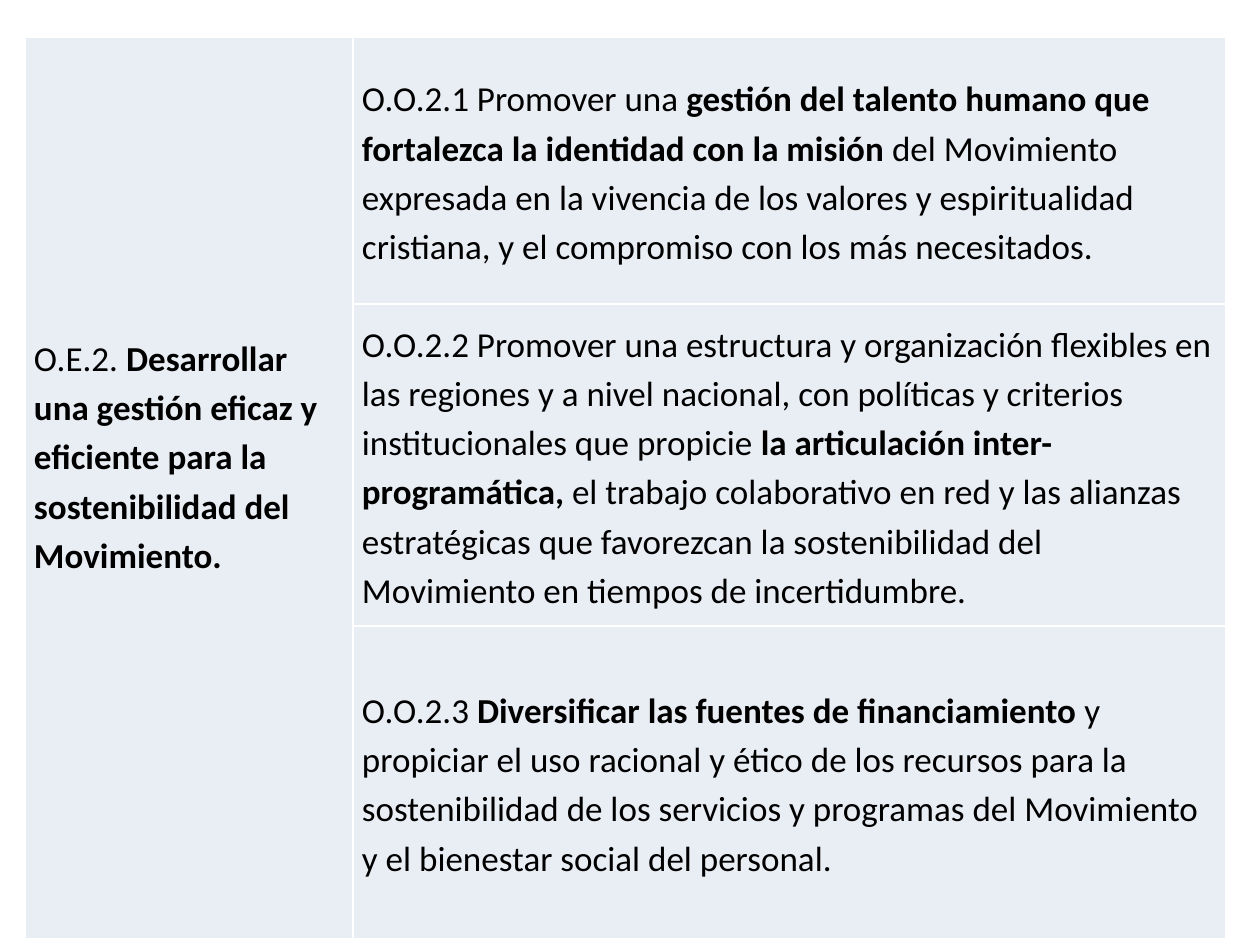
from dataclasses import dataclass

from lxml.etree import SubElement
from pptx import Presentation
from pptx.dml.color import RGBColor
from pptx.enum.text import MSO_ANCHOR
from pptx.oxml.ns import qn
from pptx.table import _Cell
from pptx.util import Emu, Pt

PX_PER_INCH = 126
COLS = (328, 873)
ROWS = (267, 322, 312)
INSET = 9
FILL, BORDER, TEXT = "E9EDF4", "FFFFFF", "000000"


@dataclass(frozen=True)
class Objective:
    row: int
    col: int
    runs: tuple[tuple[str, bool], ...]  # (text, bold)
    bottom: int = 0


OBJECTIVES = (
    # The bottom inset raises the text above the middle of the merged cell
    Objective(0, 0, (
        ("O.E.2. ", False),
        ("Desarrollar una gestión eficaz y eficiente para la "
         "sostenibilidad del Movimiento.", True),
    ), bottom=66),
    Objective(0, 1, (
        ("O.O.2.1 Promover una ", False),
        ("gestión del talento humano que fortalezca la identidad "
         "con la misión ", True),
        ("del Movimiento expresada en la vivencia de los valores y "
         "espiritualidad cristiana, y el compromiso con los más "
         "necesitados.", False),
    )),
    Objective(1, 1, (
        ("O.O.2.2 Promover una estructura y organización flexibles en las "
         "regiones y a nivel nacional, con políticas y criterios "
         "institucionales que propicie ", False),
        ("la articulación inter-programática,", True),
        (" el trabajo colaborativo en red y las alianzas estratégicas que "
         "favorezcan la sostenibilidad del Movimiento en tiempos de "
         "incertidumbre.", False),
    )),
    Objective(2, 1, (
        ("O.O.2.3 ", False),
        ("Diversificar las fuentes de financiamiento ", True),
        ("y propiciar el uso racional y ético de los recursos para la "
         "sostenibilidad de los servicios y programas del Movimiento y el "
         "bienestar social del personal.", False),
    )),
)


def px(n: int) -> Emu:
    return Emu(round(n * 914400 / PX_PER_INCH))


def rgb(color: str) -> RGBColor:
    return RGBColor.from_string(color)


def style_cell(cell: _Cell) -> None:
    tc_pr = cell._tc.get_or_add_tcPr()
    for side in ("a:lnL", "a:lnR", "a:lnT", "a:lnB"):
        ln = SubElement(tc_pr, qn(side), w=str(Pt(1)))
        fill = SubElement(ln, qn("a:solidFill"))
        SubElement(fill, qn("a:srgbClr"), val=BORDER)
    cell.fill.solid()
    cell.fill.fore_color.rgb = rgb(FILL)


def write_objective(cell: _Cell, objective: Objective) -> None:
    cell.vertical_anchor = MSO_ANCHOR.MIDDLE
    cell.margin_left = cell.margin_right = px(INSET)
    cell.margin_top = 0
    cell.margin_bottom = px(objective.bottom)
    p = cell.text_frame.paragraphs[0]
    p.line_spacing = 1.15
    p.space_after = Pt(10)
    for text, bold in objective.runs:
        r = p.add_run()
        r.text = text
        r.font.name = "Calibri"
        r.font.size = Pt(20)
        r.font.bold = bold
        r.font.color.rgb = rgb(TEXT)


def main() -> None:
    prs = Presentation()
    prs.slide_width, prs.slide_height = px(1260), px(945)
    slide = prs.slides.add_slide(prs.slide_layouts[6])
    table = slide.shapes.add_table(
        len(ROWS), len(COLS), px(25), px(37), px(sum(COLS)), px(sum(ROWS))
    ).table
    table.first_row = table.horz_banding = False
    for column, width in zip(table.columns, COLS):
        column.width = px(width)
    for row, height in zip(table.rows, ROWS):
        row.height = px(height)
    for cell in table.iter_cells():
        style_cell(cell)
    table.cell(0, 0).merge(table.cell(len(ROWS) - 1, 0))
    for objective in OBJECTIVES:
        write_objective(table.cell(objective.row, objective.col), objective)
    prs.save("out.pptx")


if __name__ == "__main__":
    main()
